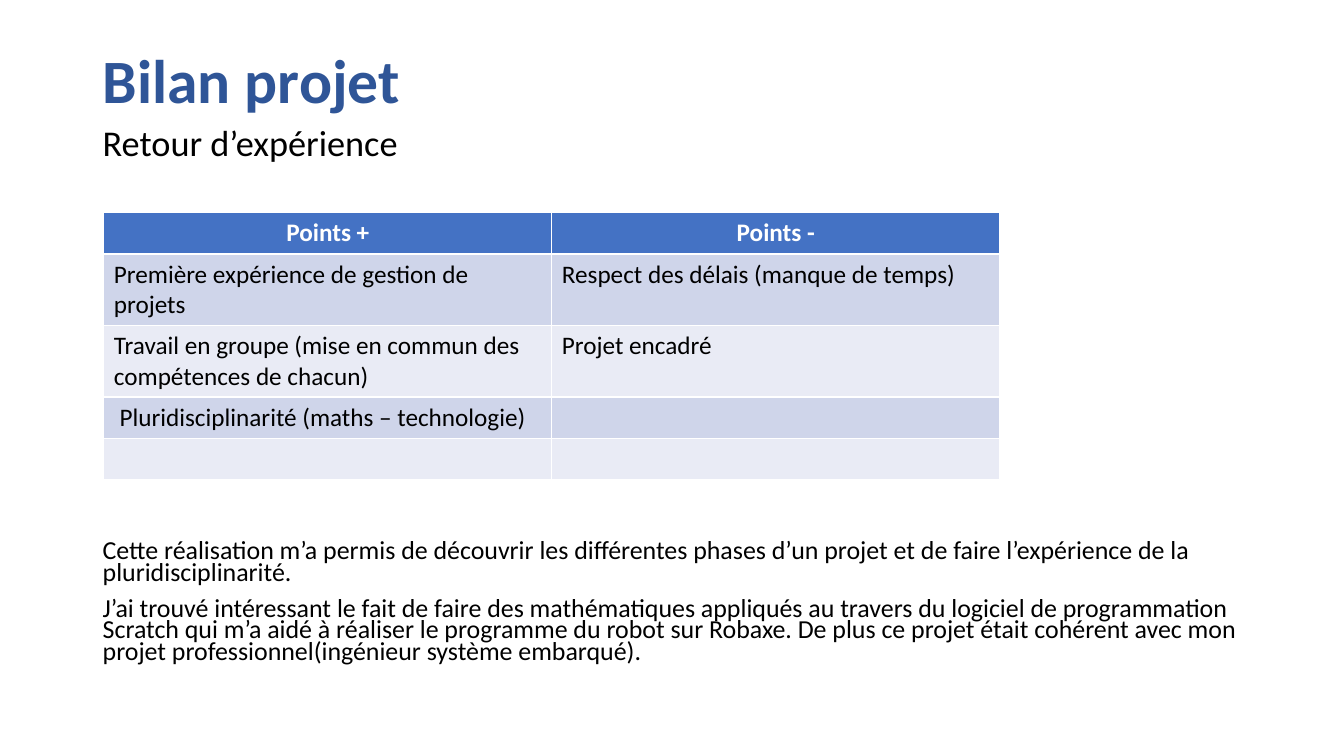
"""Build the project review slide: title, table of pros and cons, conclusion."""
from pptx import Presentation
from pptx.dml.color import RGBColor
from pptx.enum.text import MSO_ANCHOR as Anchor, MSO_AUTO_SIZE as AutoSize, PP_ALIGN as Align
from pptx.util import Inches, Pt

WIDTH, HEIGHT = 13.33, 7.5
MARGIN = 0.92
CONTENT_WIDTH = WIDTH - 2 * MARGIN
TABLE_LEFT, TABLE_TOP = 1.03, 2.11
TABLE_WIDTH = WIDTH * 2 / 3
ONE_LINE, TWO_LINES = 0.41, 0.71
FONT = "Calibri"

BLACK = RGBColor(0x00, 0x00, 0x00)
WHITE = RGBColor(0xFF, 0xFF, 0xFF)
TITLE_BLUE = RGBColor(0x2F, 0x55, 0x97)
HEADER_BLUE = RGBColor(0x44, 0x72, 0xC4)
BANDS = (RGBColor(0xCF, 0xD5, 0xEA), RGBColor(0xE9, 0xEB, 0xF5))

HEADINGS = ("Points +", "Points -")
POINTS = (
    (TWO_LINES, "Première expérience de gestion de projets", "Respect des délais (manque de temps)"),
    (TWO_LINES, "Travail en groupe (mise en commun des compétences de chacun)", "Projet encadré"),
    (ONE_LINE, " Pluridisciplinarité (maths – technologie)", ""),
    (ONE_LINE, "", ""),
)
CONCLUSION = (
    "Cette réalisation m’a permis de découvrir les différentes phases d’un projet "
    "et de faire l’expérience de la pluridisciplinarité.",
    "J’ai trouvé intéressant le fait de faire des mathématiques appliqués au travers "
    "du logiciel de programmation Scratch qui m’a aidé à réaliser le programme du robot "
    "sur Robaxe. De plus ce projet était cohérent avec mon projet professionnel"
    "(ingénieur système embarqué).",
)


def add_run(paragraph, text, size, color=BLACK, bold=False):
    """Append one formatted run to a paragraph."""
    run = paragraph.add_run()
    run.text = text
    run.font.name = FONT
    run.font.size = Pt(size)
    run.font.bold = bold
    run.font.color.rgb = color


def set_title(slide, text):
    """Place and format the title placeholder."""
    title = slide.shapes.title
    title.left, title.top = Inches(MARGIN), Inches(0.4)
    title.width, title.height = Inches(CONTENT_WIDTH), Inches(0.86)
    frame = title.text_frame
    frame.auto_size = AutoSize.NONE
    frame.vertical_anchor = Anchor.MIDDLE
    heading = frame.paragraphs[0]
    heading.alignment = Align.LEFT
    heading.line_spacing = 0.9
    add_run(heading, text, 44, TITLE_BLUE, bold=True)


def add_body(slide, top, height, texts, size):
    """Add a full-width text block with one paragraph per text."""
    body = slide.shapes.add_textbox(
        Inches(MARGIN), Inches(top), Inches(CONTENT_WIDTH), Inches(height))
    frame = body.text_frame
    frame.word_wrap = True
    for index, text in enumerate(texts):
        paragraph = frame.add_paragraph() if index else frame.paragraphs[0]
        paragraph.line_spacing = 0.7
        paragraph.space_before = Pt(10 if index else 0)
        add_run(paragraph, text, size)


def fill_cell(cell, text, fill, color=BLACK, heading=False):
    """Colour a table cell and write its text."""
    cell.fill.solid()
    cell.fill.fore_color.rgb = fill
    paragraph = cell.text_frame.paragraphs[0]
    paragraph.alignment = Align.CENTER if heading else Align.LEFT
    if text:
        add_run(paragraph, text, 18, color, bold=heading)


def add_points_table(slide):
    """Add the table of positive and negative points."""
    heights = [ONE_LINE] + [height for height, *_ in POINTS]
    table = slide.shapes.add_table(
        len(heights), len(HEADINGS), Inches(TABLE_LEFT), Inches(TABLE_TOP),
        Inches(TABLE_WIDTH), Inches(sum(heights))).table
    for row, height in zip(table.rows, heights):
        row.height = Inches(height)
    for column, text in enumerate(HEADINGS):
        fill_cell(table.cell(0, column), text, HEADER_BLUE, WHITE, heading=True)
    for index, (_, *points) in enumerate(POINTS):
        for column, text in enumerate(points):
            fill_cell(table.cell(index + 1, column), text, BANDS[index % 2])


def main():
    """Assemble and save the slide."""
    deck = Presentation()
    deck.slide_width, deck.slide_height = Inches(WIDTH), Inches(HEIGHT)
    slide = deck.slides.add_slide(deck.slide_layouts[5])
    set_title(slide, "Bilan projet")
    add_body(slide, 1.26, 0.5, ["Retour d’expérience"], 25.9)
    add_points_table(slide)
    add_body(slide, 5.33, 1.4, CONCLUSION, 18.5)
    deck.save("out.pptx")


if __name__ == "__main__":
    main()
